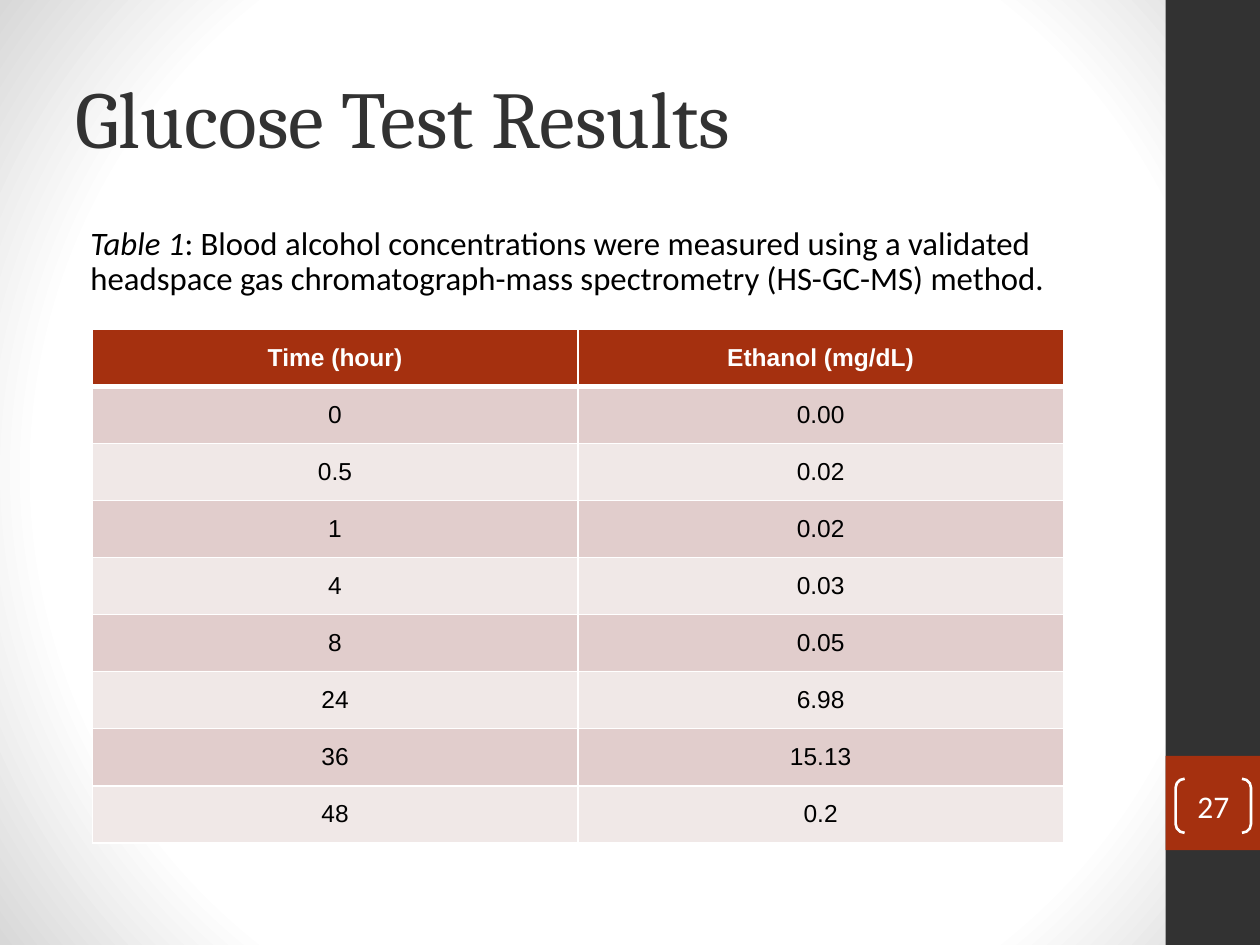
from pptx import Presentation
from pptx.dml.color import RGBColor
from pptx.enum.shapes import MSO_SHAPE
from pptx.enum.text import MSO_ANCHOR, MSO_AUTO_SIZE, PP_ALIGN
from pptx.oxml import parse_xml
from pptx.oxml.ns import nsdecls
from pptx.util import Cm, Pt

COLORS = {
    "dark": "323232",
    "accent": "A5300F",
    "white": "FFFFFF",
    "black": "000000",
    "edge": "D8D8D8",
    "band": "E1CDCC",
    "light": "F0E8E7",
}
HEADER = ("Time (hour)", "Ethanol (mg/dL)")
RESULTS = [
    ("0", "0.00"),
    ("0.5", "0.02"),
    ("1", "0.02"),
    ("4", "0.03"),
    ("8", "0.05"),
    ("24", "6.98"),
    ("36", "15.13"),
    ("48", "0.2"),
]


class SlideBuilder:
    """Holds the colours, the fonts and the slide being built."""

    heading_font = "Cambria"
    body_font = "Calibri"
    table_font = "Arial"

    def __init__(self, prs):
        self.s = prs.slides.add_slide(prs.slide_layouts[1])

    def rgb(self, color):
        return RGBColor.from_string(COLORS[color])

    def style(self, r, font, size, color, bold=False, italic=False):
        f = r.font
        f.name, f.size, f.bold, f.italic = font, Pt(size), bold, italic
        f.color.rgb = self.rgb(color)

    def place(self, sp, left, top, width, height):
        sp.left, sp.top, sp.width, sp.height = map(Cm, (left, top, width, height))
        sp.text_frame.auto_size = MSO_AUTO_SIZE.NONE

    def background(self):
        stops = "".join(
            f'<a:gs pos="{pos * 1000}"><a:srgbClr val="{COLORS[color]}"/></a:gs>'
            for pos, color in ((0, "white"), (75, "white"), (100, "edge"))
        )
        self.s.element.cSld.insert(0, parse_xml(
            f'<p:bg {nsdecls("p", "a")}><p:bgPr><a:gradFill rotWithShape="1">'
            f'<a:gsLst>{stops}</a:gsLst><a:path path="circle">'
            '<a:fillToRect l="50000" t="50000" r="50000" b="50000"/></a:path>'
            '</a:gradFill><a:effectLst/></p:bgPr></p:bg>'
        ))

    def title(self, text, *box):
        sp = self.s.shapes.title
        self.place(sp, *box)
        tf = sp.text_frame
        tf.text = text
        tf.vertical_anchor = MSO_ANCHOR.MIDDLE
        p = tf.paragraphs[0]
        p.alignment = PP_ALIGN.LEFT
        self.style(p.runs[0], self.heading_font, 46, "dark")

    def caption(self, label, text, *box):
        sp = self.s.placeholders[1]
        self.place(sp, *box)
        p = sp.text_frame.paragraphs[0]
        p.line_spacing, p.space_before = 0.9, Pt(3.6)
        for part, italic in ((label, True), (text, False)):
            r = p.add_run()
            r.text = part
            self.style(r, self.body_font, 18.7, "black", italic=italic)
        pPr = p._p.get_or_add_pPr()
        pPr.set("marL", str(Cm(0.3)))
        pPr.set("indent", "0")
        pPr.append(parse_xml(f'<a:buNone {nsdecls("a")}/>'))

    def block(self, color, *box):
        sp = self.s.shapes.add_shape(MSO_SHAPE.RECTANGLE, *map(Cm, box))
        sp.shadow.inherit = False
        sp.fill.solid()
        sp.fill.fore_color.rgb = self.rgb(color)
        sp.line.fill.background()

    def page_number(self, text, *box):
        sp = self.s.shapes.add_shape(MSO_SHAPE.DOUBLE_BRACKET, *map(Cm, box))
        sp.shadow.inherit = False
        sp.fill.background()
        sp.line.color.rgb = self.rgb("white")
        sp.line.width = Pt(1.5)
        tf = sp.text_frame
        tf.margin_left = tf.margin_top = tf.margin_right = tf.margin_bottom = 0
        tf.vertical_anchor = MSO_ANCHOR.MIDDLE
        tf.text = text
        p = tf.paragraphs[0]
        p.alignment = PP_ALIGN.CENTER
        self.style(p.runs[0], self.body_font, 18, "white")

    def borders(self, cell, top, bottom):
        tcPr = cell._tc.get_or_add_tcPr()
        for side, width in (("L", 1), ("R", 1), ("T", top), ("B", bottom)):
            tcPr.append(parse_xml(
                f'<a:ln{side} {nsdecls("a")} w="{Pt(width)}"><a:solidFill>'
                f'<a:srgbClr val="{COLORS["white"]}"/></a:solidFill></a:ln{side}>'
            ))

    def table(self, rows, left, top, col_width, row_height):
        n, m = len(rows), len(rows[0])
        table = self.s.shapes.add_table(
            n, m, Cm(left), Cm(top), Cm(col_width * m), Cm(row_height * n)
        ).table
        for i, values in enumerate(rows):
            fill = "accent" if i == 0 else ("light", "band")[i % 2]
            for j, value in enumerate(values):
                cell = table.cell(i, j)
                self.borders(cell, 3 if i == 1 else 1, 3 if i == 0 else 1)
                cell.fill.solid()
                cell.fill.fore_color.rgb = self.rgb(fill)
                cell.vertical_anchor = MSO_ANCHOR.MIDDLE
                cell.text_frame.text = value
                p = cell.text_frame.paragraphs[0]
                p.alignment = PP_ALIGN.CENTER
                self.style(p.runs[0], self.table_font, 14,
                           "white" if i == 0 else "black", bold=i == 0)


def main():
    prs = Presentation()
    prs.slide_width, prs.slide_height = Cm(25.4), Cm(19.05)
    b = SlideBuilder(prs)
    b.background()
    b.block("dark", 23.5, 0, 1.9, 19.05)
    b.block("accent", 23.5, 15.24, 1.9, 1.9)
    b.title("Glucose Test Results", 1.27, 0.76, 21.16, 3.18)
    b.caption(
        "Table 1",
        ": Blood alcohol concentrations were measured using a validated "
        "headspace gas chromatograph-mass spectrometry (HS-GC-MS) method.",
        1.27, 4.45, 21.16, 2.18,
    )
    b.page_number("27", 23.7, 15.7, 1.52, 1.09)
    b.table([HEADER, *RESULTS], 1.86, 6.64, 9.79, 1.15)
    prs.save("out.pptx")


if __name__ == "__main__":
    main()
